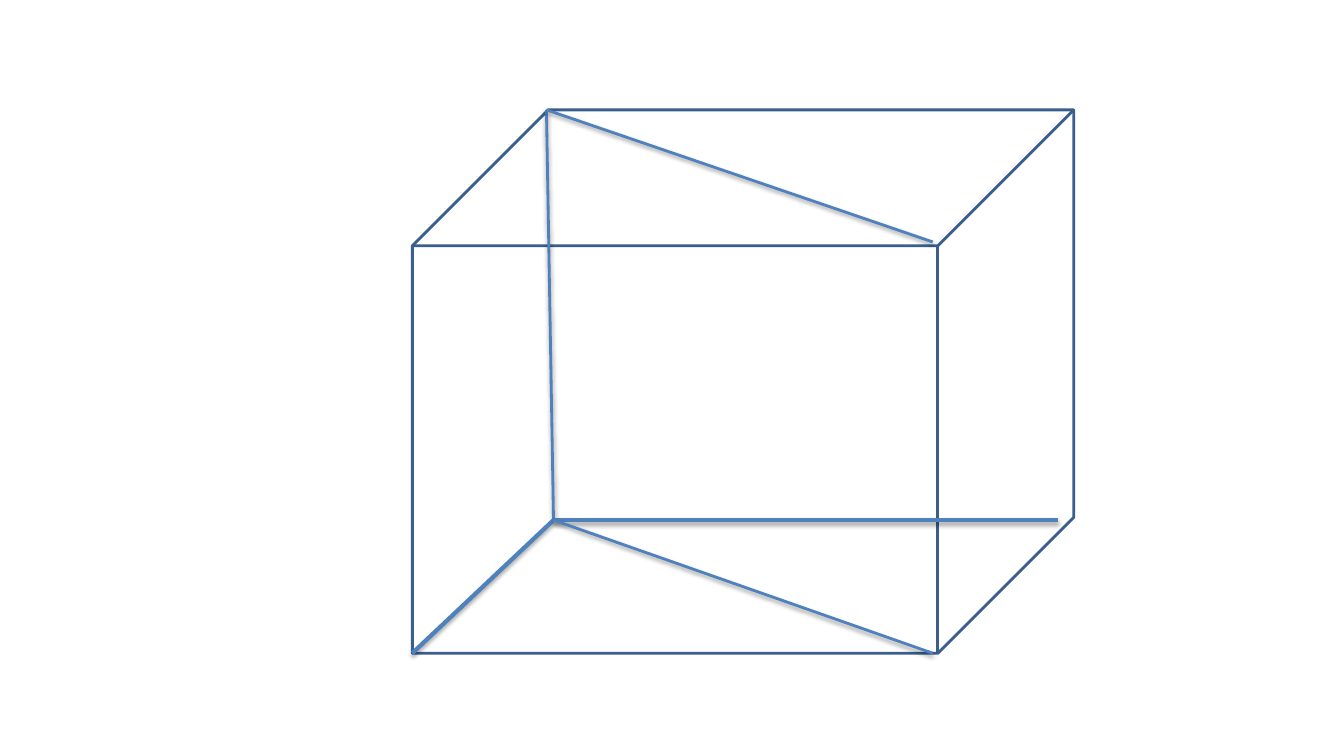
"""Build a slide with a wireframe cube, its hidden edges and two diagonals."""
from pptx import Presentation
from pptx.dml.color import RGBColor
from pptx.enum.shapes import MSO_CONNECTOR, MSO_SHAPE
from pptx.oxml import parse_xml
from pptx.oxml.ns import nsdecls
from pptx.util import Inches, Pt

CUBE_BOX = (4.09, 1.09, 6.56, 5.39)
CUBE_COLOR = "3A5F8C"
EDGE_COLOR = "4F81BD"

BACK_TOP_LEFT = (5.42, 1.09)
BACK_BOTTOM_LEFT = (5.49, 5.16)
BACK_BOTTOM_RIGHT = (10.49, 5.16)
FRONT_BOTTOM_LEFT = (4.09, 6.48)
FRONT_TOP_RIGHT = (9.25, 2.4)
FRONT_BOTTOM_RIGHT = (9.25, 6.48)

THIN = {"width": 2, "distance": 1.6, "opacity": 38}
THICK = {"width": 3, "distance": 1.8, "opacity": 35}
SHADOW_BLUR = 3.1

EDGES = [
    (BACK_TOP_LEFT, BACK_BOTTOM_LEFT, THIN),
    (BACK_BOTTOM_LEFT, BACK_BOTTOM_RIGHT, THICK),
    (BACK_BOTTOM_LEFT, FRONT_BOTTOM_LEFT, THICK),
    (BACK_TOP_LEFT, FRONT_TOP_RIGHT, THIN),
    (BACK_BOTTOM_LEFT, FRONT_BOTTOM_RIGHT, THIN),
]


def style_line(line, color, width):
    line.color.rgb = RGBColor.from_string(color)
    line.width = Pt(width)


def add_shadow(connector, distance, opacity):
    connector._element.spPr.append(parse_xml(
        f'<a:effectLst {nsdecls("a")}>'
        f'<a:outerShdw blurRad="{Pt(SHADOW_BLUR)}" dist="{Pt(distance)}" dir="5400000" rotWithShape="0">'
        f'<a:srgbClr val="000000"><a:alpha val="{opacity * 1000}"/></a:srgbClr>'
        '</a:outerShdw></a:effectLst>'))


def add_cube(slide):
    cube = slide.shapes.add_shape(MSO_SHAPE.CUBE, *map(Inches, CUBE_BOX))
    cube.shadow.inherit = False
    cube.fill.background()
    style_line(cube.line, CUBE_COLOR, 2)


def add_edge(slide, start, end, style):
    connector = slide.shapes.add_connector(MSO_CONNECTOR.STRAIGHT, *map(Inches, start + end))
    style_line(connector.line, EDGE_COLOR, style["width"])
    add_shadow(connector, style["distance"], style["opacity"])


def main():
    presentation = Presentation()
    presentation.slide_width = Inches(13.33)
    presentation.slide_height = Inches(7.5)
    slide = presentation.slides.add_slide(presentation.slide_layouts[6])
    add_cube(slide)
    for start, end, style in EDGES:
        add_edge(slide, start, end, style)
    presentation.save("out.pptx")


if __name__ == "__main__":
    main()
